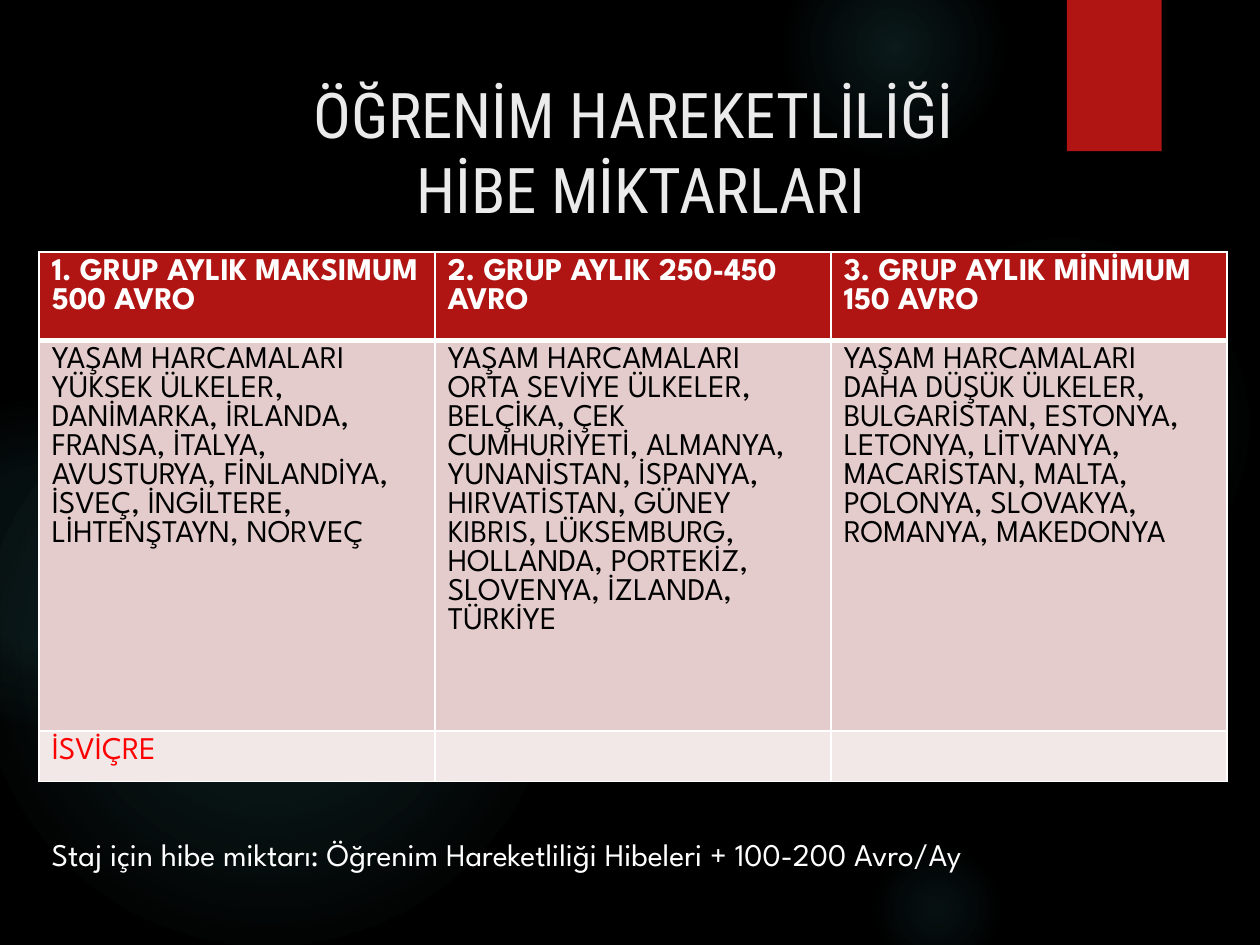
from dataclasses import dataclass

import pptx
import pptx.dml.color
import pptx.enum.shapes
import pptx.enum.text
import pptx.oxml
import pptx.oxml.ns
import pptx.util

Cm = pptx.util.Cm
Pt = pptx.util.Pt
RGB = pptx.dml.color.RGBColor.from_string
SHAPE = pptx.enum.shapes.MSO_SHAPE
ALIGN = pptx.enum.text.PP_ALIGN
NS = pptx.oxml.ns.nsdecls("a")


@dataclass(frozen=True)
class Theme:
    background: str = "000000"
    glow: str = "50B9C1"
    accent: str = "B01513"
    title: str = "EBEBEB"
    light: str = "FFFFFF"
    dark: str = "000000"
    highlight: str = "FF0000"
    band_dark: str = "E4CCCC"
    band_light: str = "F2E8E7"
    title_font: str = "Roboto Condensed"
    body_font: str = "League Spartan"
    title_size: int = 36
    body_size: int = 18


@dataclass(frozen=True)
class Glow:
    """A round light; sizes in cm, opacities and fade end in percent."""
    left: float
    top: float
    size: float
    centre: int
    middle: int
    end: int


@dataclass(frozen=True)
class TableRow:
    height: float
    fill: str
    color: str
    bold: bool
    bottom_line: int
    texts: tuple[str, ...]


THEME = Theme()
LEFT, WIDTH = 0.79, 23.95

GLOWS = [
    Glow(17.5, 4.65, 7.82, 7, 6, 69),
    Glow(15.8, -1.27, 4.45, 14, 7, 73),
    Glow(17.5, 16.94, 2.74, 9, 5, 66),
    Glow(-0.43, 7.42, 11.64, 11, 10, 75),
    Glow(-2.34, 8.05, 6.55, 8, 8, 72),
]

ROWS = [
    TableRow(1.7, THEME.accent, THEME.light, True, 3, (
        "1. GRUP AYLIK MAKSIMUM 500 AVRO",
        "2. GRUP AYLIK 250-450 AVRO",
        "3. GRUP AYLIK MİNİMUM 150 AVRO")),
    TableRow(7.59, THEME.band_dark, THEME.dark, False, 1, (
        "YAŞAM HARCAMALARI YÜKSEK ÜLKELER, DANİMARKA, İRLANDA, FRANSA, "
        "İTALYA, AVUSTURYA, FİNLANDİYA, İSVEÇ, İNGİLTERE, LİHTENŞTAYN, NORVEÇ",
        "YAŞAM HARCAMALARI ORTA SEVİYE ÜLKELER, BELÇİKA, ÇEK CUMHURİYETİ, "
        "ALMANYA, YUNANİSTAN, İSPANYA, HIRVATİSTAN, GÜNEY KIBRIS, LÜKSEMBURG, "
        "HOLLANDA, PORTEKİZ, SLOVENYA, İZLANDA, TÜRKİYE",
        "YAŞAM HARCAMALARI DAHA DÜŞÜK ÜLKELER, BULGARİSTAN, ESTONYA, LETONYA, "
        "LİTVANYA, MACARİSTAN, MALTA, POLONYA, SLOVAKYA, ROMANYA, MAKEDONYA")),
    TableRow(0.99, THEME.band_light, THEME.highlight, False, 1,
             ("İSVİÇRE", "", "")),
]


def style(p, font: str, size: int, color: str, bold: bool = False) -> None:
    p.font.name = font
    p.font.size = Pt(size)
    p.font.color.rgb = RGB(color)
    p.font.bold = bold


def draw_glow(slide, glow: Glow) -> None:
    s = slide.shapes.add_shape(SHAPE.OVAL, Cm(glow.left), Cm(glow.top),
                               Cm(glow.size), Cm(glow.size))
    s.shadow.inherit = False
    s.line.fill.background()
    s.fill.background()
    stops = "".join(
        f'<a:gs pos="{pos * 1000}"><a:srgbClr val="{THEME.glow}">'
        f'<a:alpha val="{alpha * 1000}"/></a:srgbClr></a:gs>'
        for pos, alpha in ((0, glow.centre), (36, glow.middle), (glow.end, 0)))
    gradient = pptx.oxml.parse_xml(
        f'<a:gradFill {NS}><a:gsLst>{stops}</a:gsLst><a:path path="circle">'
        '<a:fillToRect l="50000" t="50000" r="50000" b="50000"/>'
        '</a:path></a:gradFill>')
    sp_pr = s.element.spPr
    sp_pr.replace(sp_pr.find(pptx.oxml.ns.qn("a:noFill")), gradient)


def draw_text(slide, text: str, top: float, height: float, left: float,
              width: float, align: ALIGN, font: str, size: int, color: str):
    s = slide.shapes.add_textbox(Cm(left), Cm(top), Cm(width), Cm(height))
    tf = s.text_frame
    tf.word_wrap = True
    p = tf.paragraphs[0]
    p.text = text
    p.alignment = align
    style(p, font, size, color)
    return tf


def add_borders(cell, top: int, bottom: int) -> None:
    tc_pr = cell._tc.get_or_add_tcPr()
    sides = (("lnL", 1), ("lnR", 1), ("lnT", top), ("lnB", bottom))
    for i, (tag, width) in enumerate(sides):
        tc_pr.insert(i, pptx.oxml.parse_xml(
            f'<a:{tag} {NS} w="{Pt(width)}"><a:solidFill>'
            f'<a:srgbClr val="{THEME.light}"/></a:solidFill></a:{tag}>'))


def draw_table(slide, rows: list[TableRow], top: float) -> None:
    columns = len(rows[0].texts)
    height = sum(row.height for row in rows)
    table = slide.shapes.add_table(len(rows), columns, Cm(LEFT), Cm(top),
                                   Cm(WIDTH), Cm(height)).table
    top_line = 1
    for i, row in enumerate(rows):
        table.rows[i].height = Cm(row.height)
        for j, text in enumerate(row.texts):
            cell = table.cell(i, j)
            cell.fill.solid()
            cell.fill.fore_color.rgb = RGB(row.fill)
            add_borders(cell, top_line, row.bottom_line)
            p = cell.text_frame.paragraphs[0]
            p.text = text
            style(p, THEME.body_font, THEME.body_size, row.color, row.bold)
        top_line = row.bottom_line


def main() -> None:
    prs = pptx.Presentation()
    prs.slide_width, prs.slide_height = Cm(25.4), Cm(19.05)
    slide = prs.slides.add_slide(prs.slide_layouts[6])

    # Background with soft lights and the red tab
    slide.background.fill.solid()
    slide.background.fill.fore_color.rgb = RGB(THEME.background)
    for glow in GLOWS:
        draw_glow(slide, glow)
    tab = slide.shapes.add_shape(SHAPE.RECTANGLE, Cm(21.51), Cm(0),
                                 Cm(1.91), Cm(3.05))
    tab.shadow.inherit = False
    tab.fill.solid()
    tab.fill.fore_color.rgb = RGB(THEME.accent)
    tab.line.fill.background()

    # Title
    tf = draw_text(slide, "ÖĞRENİM HAREKETLİLİĞİ\v HİBE MİKTARLARI", 1.32, 3.89,
                   2.97, 19.61, ALIGN.CENTER, THEME.title_font,
                   THEME.title_size, THEME.title)
    tf.margin_top = Cm(0.2)

    # Grant table
    draw_table(slide, ROWS, 5.08)

    # Internship note
    tf = draw_text(slide, "Staj için hibe miktarı: Öğrenim Hareketliliği "
                   "Hibeleri + 100-200 Avro/Ay", 16.71, 1.02, LEFT, WIDTH,
                   ALIGN.JUSTIFY, THEME.body_font, THEME.body_size, THEME.light)
    tf.auto_size = pptx.enum.text.MSO_AUTO_SIZE.SHAPE_TO_FIT_TEXT

    prs.save("out.pptx")


if __name__ == "__main__":
    main()
